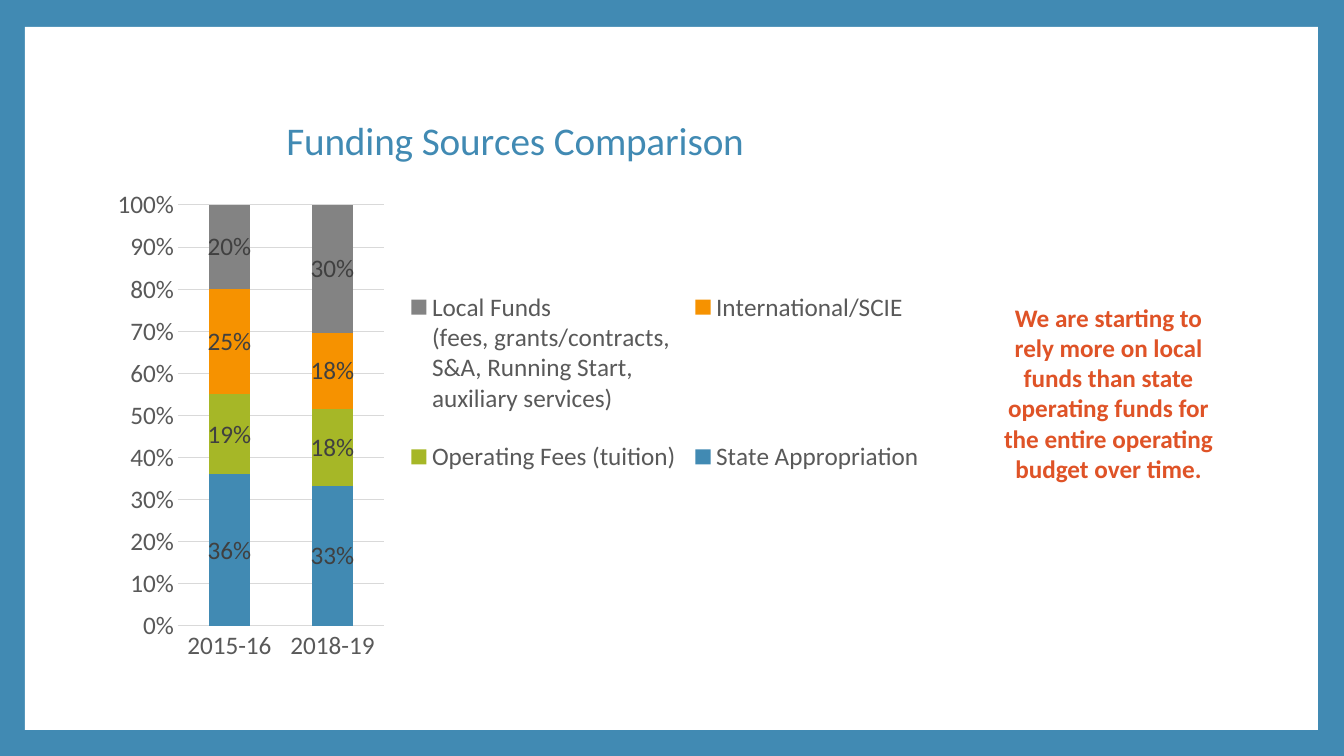
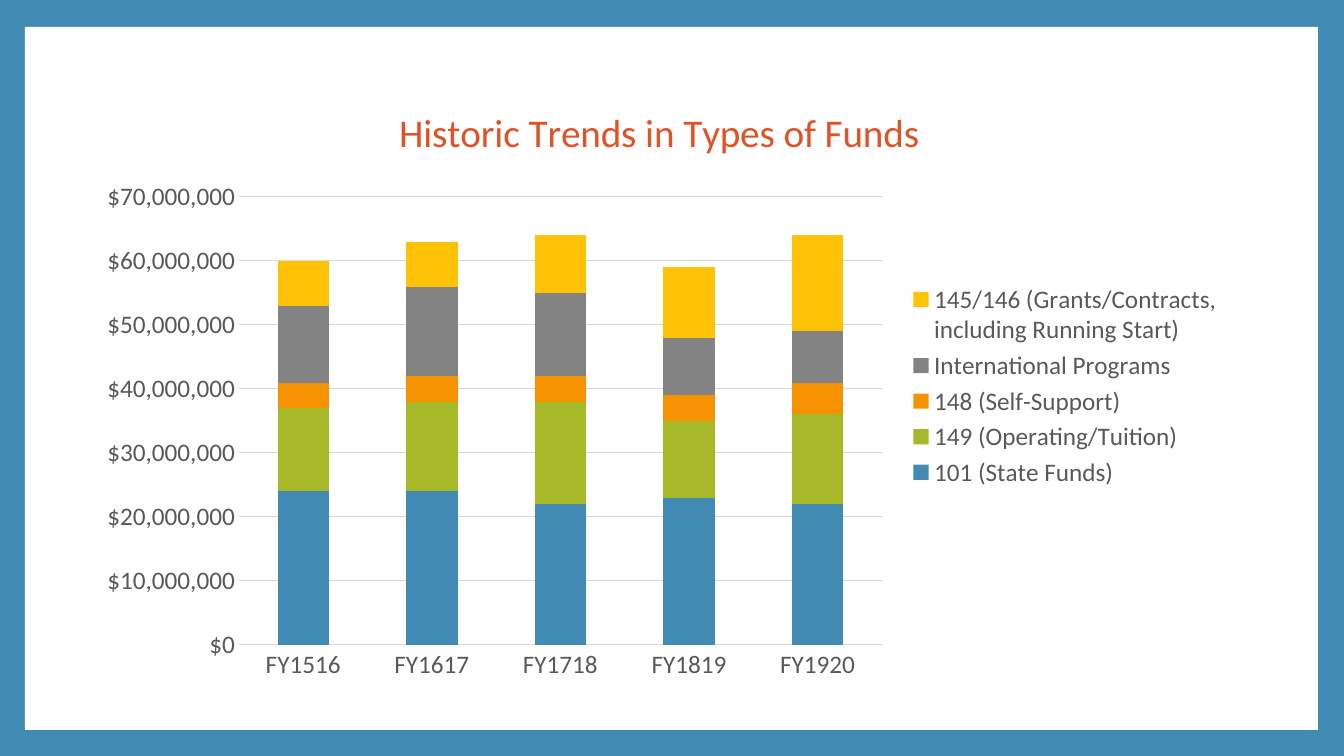
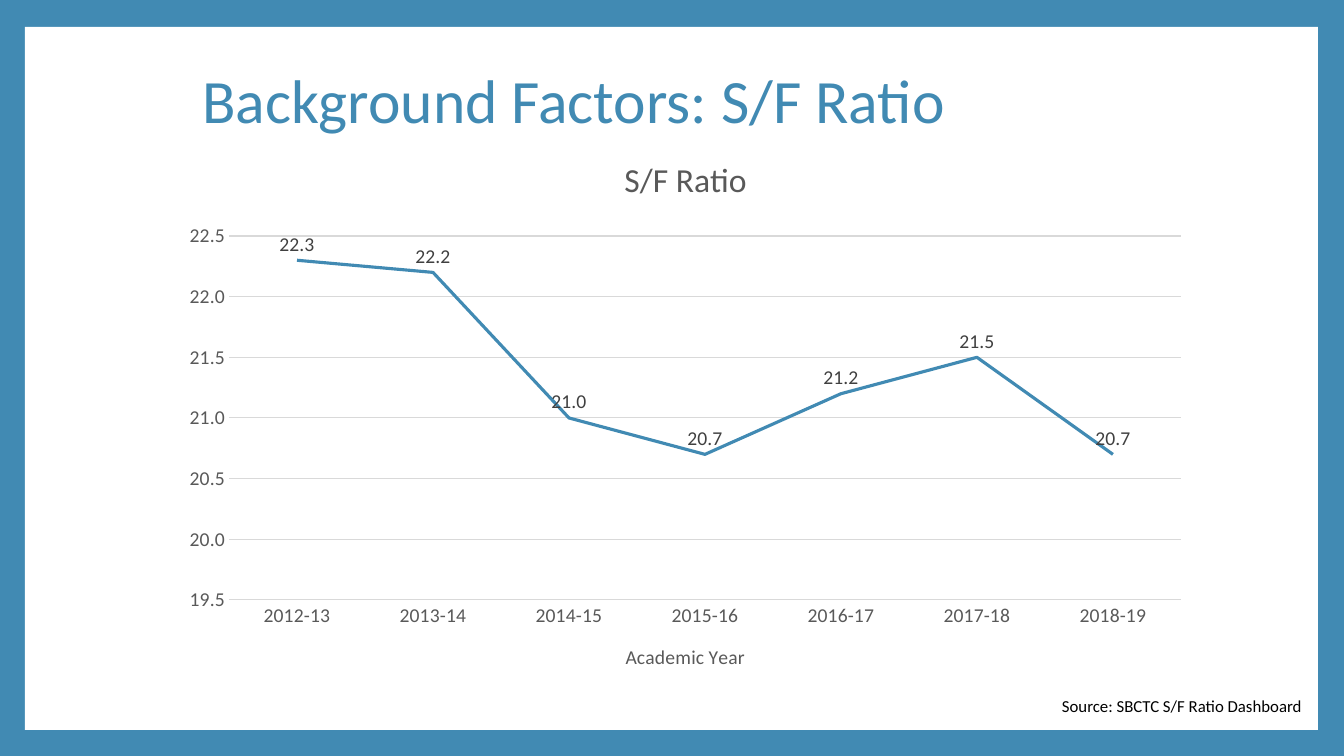
from pptx import Presentation, util as u
from pptx.chart.data import CategoryChartData
from pptx.dml.color import RGBColor
from pptx.enum import chart as ch, shapes, text
from pptx.oxml import parse_xml
from pptx.oxml.ns import nsdecls, qn

BLUE = RGBColor(0x41, 0x8A, 0xB3)
GREEN = RGBColor(0xA6, 0xB7, 0x27)
ORANGE = RGBColor(0xF6, 0x92, 0x00)
GREY = RGBColor(0x83, 0x83, 0x83)
GOLD = RGBColor(0xFE, 0xC3, 0x06)
RED = RGBColor(0xDF, 0x53, 0x27)
WHITE = RGBColor(0xFF, 0xFF, 0xFF)
BLACK = RGBColor(0, 0, 0)
SOFT = RGBColor(0x59, 0x59, 0x59)
DARK = RGBColor(0x40, 0x40, 0x40)
PALE = RGBColor(0xD9, 0xD9, 0xD9)
FACE = "Calibri"
WIDE, HIGH = 1344, 756
PANEL = (25, 27, 1293, 703)

SHARE = dict(
    kind=ch.XL_CHART_TYPE.COLUMN_STACKED_100,
    box=(100, 90, 830, 583), plot=(178, 205, 206, 421), key=(400, 264, 530, 236),
    title="Funding Sources Comparison", tone=BLUE, head=28, size=18,
    fmt="0%", span=(0, 1, 0.1), mark=ch.XL_LABEL_POSITION.CENTER,
    cats=["2015-16", "2018-19"],
    rows=[
        ("State Appropriation", BLUE, [0.36, 0.33]),
        ("Operating Fees (tuition)", GREEN, [0.19, 0.18]),
        ("International/SCIE", ORANGE, [0.25, 0.18]),
        ("Local Funds\n(fees, grants/contracts,\nS&A, Running Start,\nauxiliary services)",
         GREY, [0.2, 0.3]),
    ])

TREND = dict(
    kind=ch.XL_CHART_TYPE.COLUMN_STACKED,
    box=(85, 81, 1148, 610), plot=(239, 197, 643, 448), key=None,
    title="Historic Trends in Types of Funds", tone=RED, head=28, size=18,
    fmt='"$"#,##0', span=(0, 70000000, 10000000), mark=None,
    cats=["FY1516", "FY1617", "FY1718", "FY1819", "FY1920"],
    rows=[
        ("101 (State Funds)", BLUE, [24000000, 24000000, 22000000, 23000000, 22000000]),
        ("149 (Operating/Tuition)", GREEN, [13000000, 14000000, 16000000, 12000000, 14000000]),
        ("148 (Self-Support)", ORANGE, [4000000, 4000000, 4000000, 4000000, 5000000]),
        ("International Programs", GREY, [12000000, 14000000, 13000000, 9000000, 8000000]),
        ("145/146 (Grants/Contracts, including Running Start)", GOLD,
         [7000000, 7000000, 9000000, 11000000, 15000000]),
    ])

RATIO = dict(
    kind=ch.XL_CHART_TYPE.LINE,
    box=(169, 134, 1033, 556), plot=(229, 236, 952, 364), key=None,
    title="S/F Ratio", tone=SOFT, head=24, size=14,
    fmt="0.0", span=(19.5, 22.5, 0.5), mark=ch.XL_LABEL_POSITION.ABOVE,
    foot="Academic Year",
    cats=["2012-13", "2013-14", "2014-15", "2015-16", "2016-17", "2017-18", "2018-19"],
    rows=[("Series 1", BLUE, [22.3, 22.2, 21, 20.7, 21.2, 21.5, 20.7])])

CLAIM = ("We are starting to rely more on local funds than state operating funds "
         "for the entire operating budget over time.")
CREDIT = "Source: SBCTC S/F Ratio Dashboard"
HEAD = "Background Factors: S/F Ratio"


def px(n):
    return u.Emu(round(n * 914400 / 100.8))


def place(box):
    return [px(n) for n in box]


def style(font, size, tone, bold=False):
    font.name, font.size, font.bold = FACE, u.Pt(size), bold
    font.color.rgb = tone


def write(shape, words, size, tone, bold=False):
    shape.text_frame.text = words
    para = shape.text_frame.paragraphs[0]
    style(para.runs[0].font, size, tone, bold)
    return para


def label(slide, box, words, size, tone, bold=False, wrap=True):
    shape = slide.shapes.add_textbox(*place(box))
    shape.text_frame.word_wrap = wrap
    return write(shape, words, size, tone, bold)


def start(deck, layout):
    slide = deck.slides.add_slide(deck.slide_layouts[layout])
    panel = slide.shapes.add_shape(shapes.MSO_SHAPE.RECTANGLE, *place(PANEL))
    panel.shadow.inherit = False
    panel.fill.solid()
    panel.fill.fore_color.rgb = WHITE
    panel.line.fill.background()
    slide.shapes._spTree.insert(2, panel._element)
    return slide


def pin(node, index, part, box, inner=""):
    for old in node.findall(qn("c:layout")):
        node.remove(old)
    sizes = ((part[0] - box[0]) / box[2], (part[1] - box[1]) / box[3],
             part[2] / box[2], part[3] / box[3])
    spots = "".join(f'<c:{n} val="{v:.4f}"/>' for n, v in zip("xywh", sizes))
    node.insert(index, parse_xml(
        f'<c:layout {nsdecls("c")}><c:manualLayout>{inner}<c:xMode val="edge"/>'
        f'<c:yMode val="edge"/>{spots}</c:manualLayout></c:layout>'))


def caption(owner, words, size, tone):
    owner.has_title = True
    name = owner.chart_title if hasattr(owner, "chart_title") else owner.axis_title
    write(name, words, size, tone)


def rule(line):
    line.color.rgb = PALE
    line.width = u.Pt(0.75)


def draw(slide, info):
    data = CategoryChartData(number_format=info["fmt"])
    data.categories = info["cats"]
    for name, tone, vals in info["rows"]:
        data.add_series(name, vals)
    chart = slide.shapes.add_chart(info["kind"], *place(info["box"]), data).chart
    style(chart.font, 10, BLACK)
    caption(chart, info["title"], info["head"], info["tone"])
    area = chart.element.find(qn("c:chart")).find(qn("c:plotArea"))
    pin(area, 0, info["plot"], info["box"], '<c:layoutTarget val="inner"/>')

    cat, val = chart.category_axis, chart.value_axis
    for axis in (cat, val):
        axis.major_tick_mark = axis.minor_tick_mark = ch.XL_TICK_MARK.NONE
        style(axis.tick_labels.font, info["size"], SOFT)
    rule(cat.format.line)
    val.format.line.fill.background()
    val.has_major_gridlines = True
    rule(val.major_gridlines.format.line)
    val.minimum_scale, val.maximum_scale, val.major_unit = info["span"]
    val.tick_labels.number_format = info["fmt"]
    val.tick_labels.number_format_is_linked = False
    if "foot" in info:
        caption(cat, info["foot"], info["size"], SOFT)

    lined = info["kind"] == ch.XL_CHART_TYPE.LINE
    plot = chart.plots[0]
    plot.vary_by_categories = False
    chart.has_legend = not lined
    if not lined:
        plot.gap_width, plot.overlap = 150, 100
        chart.legend.position = ch.XL_LEGEND_POSITION.RIGHT
        chart.legend.include_in_layout = False
        style(chart.legend.font, info["size"], SOFT)
        if info["key"]:
            pin(chart.legend._element, 1, info["key"], info["box"])

    for series, (name, tone, vals) in zip(plot.series, info["rows"]):
        if lined:
            series.smooth = False
            series.marker.style = ch.XL_MARKER_STYLE.NONE
            series.format.line.color.rgb = tone
            series.format.line.width = u.Pt(2.25)
        else:
            series.format.fill.solid()
            series.format.fill.fore_color.rgb = tone
        if info["mark"] is not None:
            tags = series.data_labels
            tags.show_value = True
            tags.position = info["mark"]
            tags.number_format = info["fmt"]
            tags.number_format_is_linked = False
            style(tags.font, info["size"], DARK)


def main():
    deck = Presentation()
    deck.slide_width, deck.slide_height = px(WIDE), px(HIGH)
    back = deck.slide_master.background.fill
    back.solid()
    back.fore_color.rgb = BLUE

    slide = start(deck, 6)
    draw(slide, SHARE)
    para = label(slide, (992, 297, 233, 224), CLAIM, 18, RED, bold=True)
    para.alignment = text.PP_ALIGN.CENTER

    draw(start(deck, 6), TREND)

    slide = start(deck, 5)
    draw(slide, RATIO)
    label(slide, (1052, 691, 263, 30), CREDIT, 12, BLACK, wrap=False)
    title = slide.shapes.title
    title.left, title.top, title.width, title.height = place((192, 65, 1089, 149))
    title.text_frame.vertical_anchor = text.MSO_ANCHOR.TOP
    para = write(title, HEAD, 44, BLUE)
    para.alignment = text.PP_ALIGN.LEFT
    para.line_spacing = 0.9

    deck.save("out.pptx")


if __name__ == "__main__":
    main()
